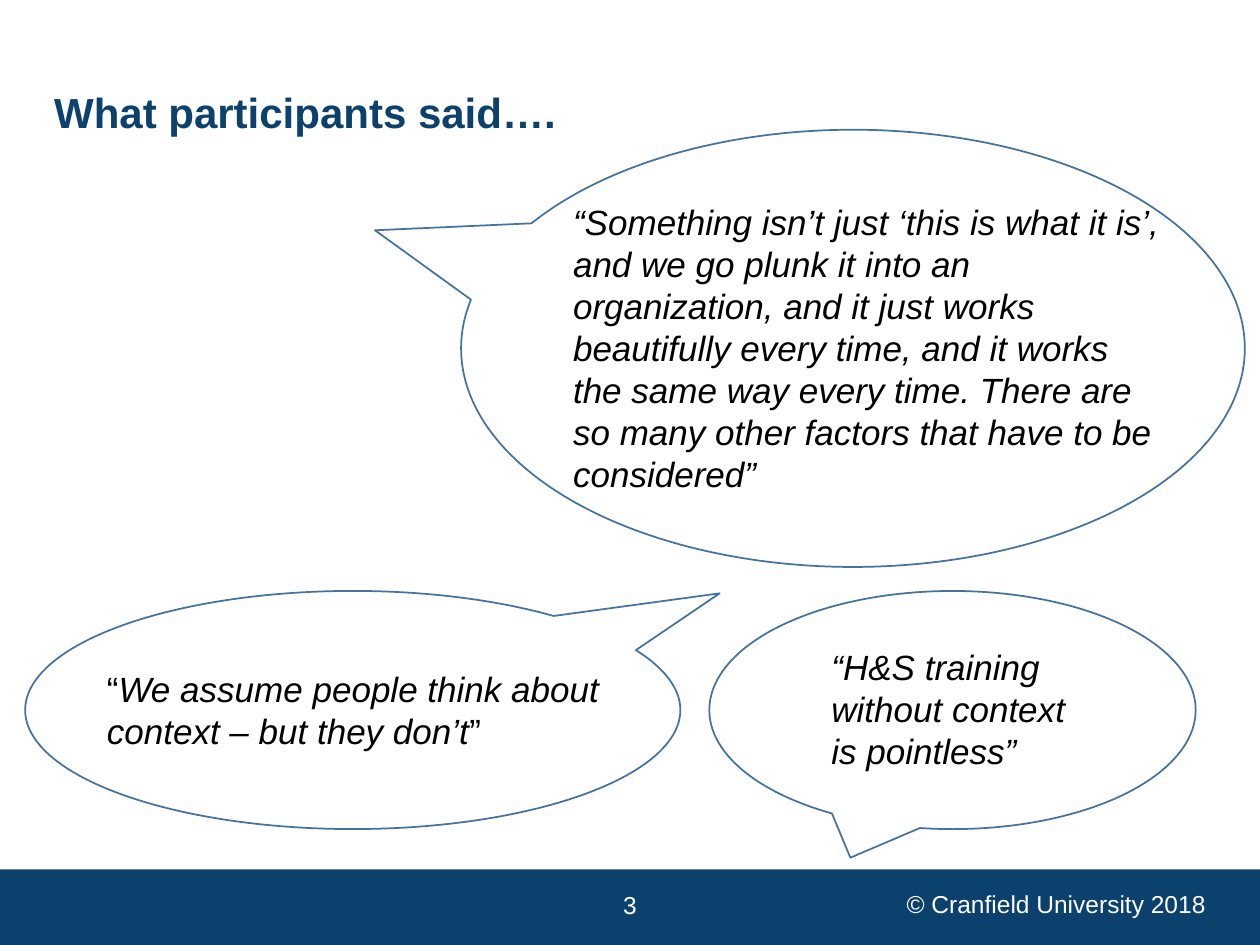
import pptx
import pptx.util
import pptx.dml.color
import pptx.enum.shapes
import pptx.enum.text

NAVY = pptx.dml.color.RGBColor(0x0C, 0x40, 0x6D)
BLUE = pptx.dml.color.RGBColor(0x43, 0x73, 0x9E)
BLACK = pptx.dml.color.RGBColor(0, 0, 0)
WHITE = pptx.dml.color.RGBColor(255, 255, 255)

SHAPES = pptx.enum.shapes.MSO_SHAPE
ALIGN = pptx.enum.text.PP_ALIGN
ANCHOR = pptx.enum.text.MSO_ANCHOR

COLUMNS, ROWS = 40, 30

TITLE = {"size": pptx.util.Pt(24), "bold": True}
QUOTE = {"size": pptx.util.Pt(20), "italic": True}
MARK = {"size": pptx.util.Pt(20), "italic": False}
FOOTER = {"size": pptx.util.Pt(14)}


class QuotePage:
    """Holds the style and the current slide; places are in grid cells."""

    def __init__(self, deck, font="Arial"):
        self.font = font
        self.column = deck.slide_width / COLUMNS
        self.row = deck.slide_height / ROWS
        self.page = deck.slides.add_slide(deck.slide_layouts[5])

    def cells(self, left, top, width, height):
        return [round(left * self.column), round(top * self.row),
                round(width * self.column), round(height * self.row)]

    def fill_text(self, box, spans, color, align, anchor):
        frame = box.text_frame
        frame.word_wrap = True
        frame.auto_size = pptx.enum.text.MSO_AUTO_SIZE.NONE
        frame.vertical_anchor = anchor
        para = frame.paragraphs[0]
        para.alignment = align
        for text, style in spans:
            span = para.add_run()
            span.text = text
            span.font.color.rgb = color
            for name, value in {"name": self.font, **style}.items():
                setattr(span.font, name, value)
        return para

    def title(self, text, place):
        box = self.page.shapes.title
        box.left, box.top, box.width, box.height = self.cells(*place)
        para = self.fill_text(box, [(text, TITLE)], NAVY, ALIGN.LEFT, ANCHOR.MIDDLE)
        para.line_spacing = 0.9

    def text(self, spans, place, color=BLACK, align=ALIGN.LEFT, anchor=ANCHOR.TOP):
        box = self.page.shapes.add_textbox(*self.cells(*place))
        self.fill_text(box, spans, color, align, anchor)

    def band(self, place):
        shape = self.page.shapes.add_shape(SHAPES.RECTANGLE, *self.cells(*place))
        shape.shadow.inherit = False
        shape.fill.solid()
        shape.fill.fore_color.rgb = NAVY
        shape.line.fill.background()

    def callout(self, place, tip):
        """Draw a speech bubble; tip is its offset from the centre, in shares of its size."""
        shape = self.page.shapes.add_shape(SHAPES.OVAL_CALLOUT, *self.cells(*place))
        shape.shadow.inherit = False
        shape.fill.background()
        shape.line.color.rgb = BLUE
        shape.line.width = pptx.util.Pt(1)
        for index, share in enumerate(tip):
            shape.adjustments[index] = share


def main():
    deck = pptx.Presentation()
    deck.slide_width = pptx.util.Inches(10)
    deck.slide_height = pptx.util.Inches(7.5)
    page = QuotePage(deck)

    # Footer
    page.band((0, 27.6, COLUMNS, 2.4))
    page.text([("© Cranfield University 2018", FOOTER)], (27.88, 28.04, 10.8, 1.36),
              WHITE, ALIGN.RIGHT)
    page.text([("3", FOOTER)], (13.24, 28.04, 13.52, 1.36),
              WHITE, ALIGN.CENTER, ANCHOR.MIDDLE)

    # Title
    page.title("What participants said….", (1.32, 1.76, 37.32, 3.76))

    # Quotes: bubble place, bubble tip, text place, text spans
    quotes = [
        ((14.64, 4.12, 24.88, 13.88), (-0.61, -0.27), (17.8, 6.16, 19.48, 9.84),
         [("“Something isn’t just ‘this is what it is’, and we go plunk it into an "
           "organization, and it just works beautifully every time, and it works "
           "the same way every time. There are so many other factors that have "
           "to be considered”", QUOTE)]),
        ((0.8, 18.76, 20.8, 7.56), (0.56, -0.49), (3, 21, 17.32, 3.08),
         [("“", MARK),
          ("We assume people think about context – but they don’t", QUOTE),
          ("”", MARK)]),
        ((22.52, 18.76, 15.44, 7.56), (-0.21, 0.62), (26, 20.28, 9.12, 4.44),
         [("“H&S training without context is pointless”", QUOTE)]),
    ]
    for bubble, tip, place, spans in quotes:
        page.callout(bubble, tip)
        page.text(spans, place)

    deck.save("out.pptx")


if __name__ == "__main__":
    main()
